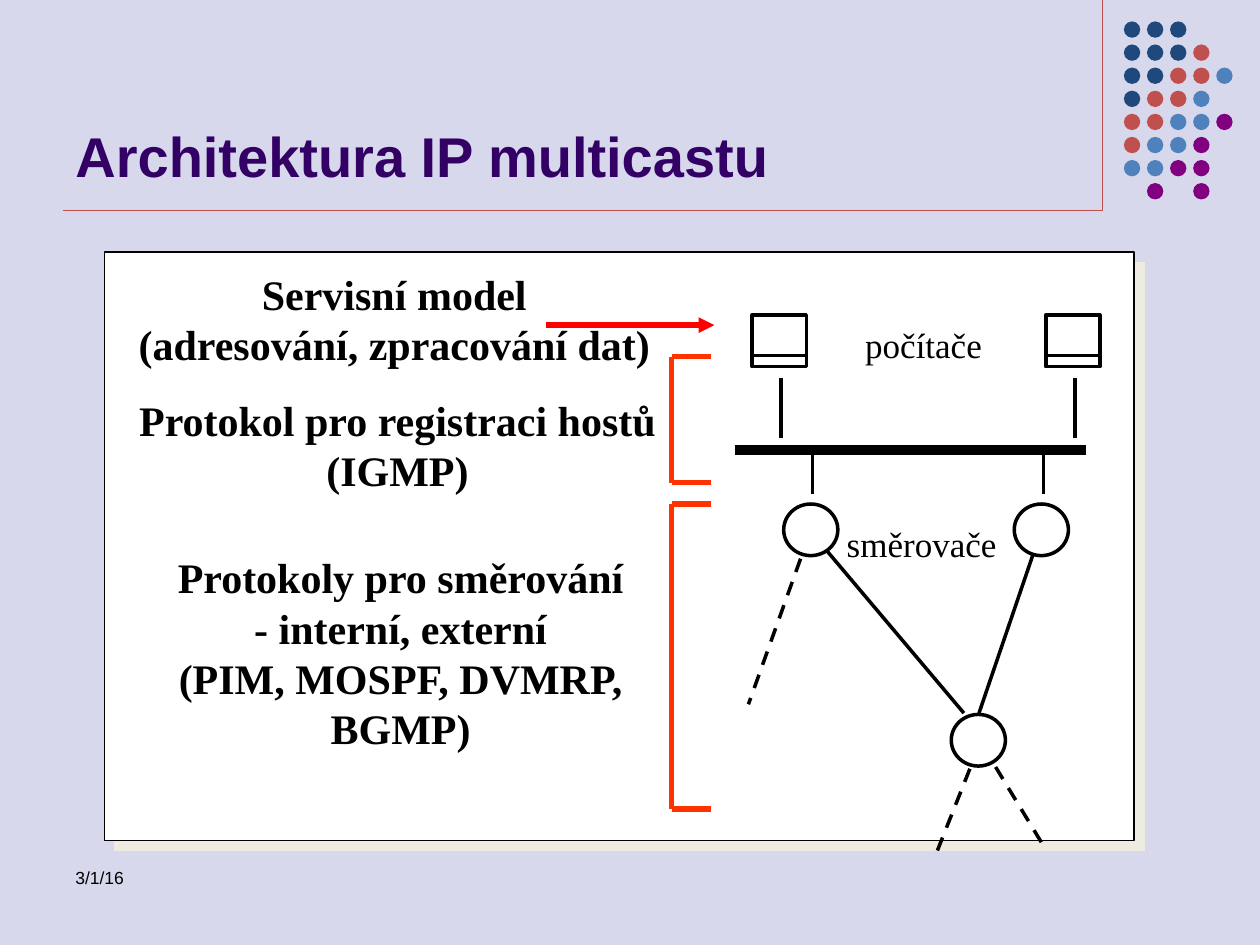
from lxml import etree
from pptx import Presentation
from pptx import util as u
from pptx.dml.color import RGBColor
from pptx.enum import dml, shapes, text
from pptx.oxml.ns import qn

C = {"bg": "D8D8EC", "black": "000000", "white": "FFFFFF", "title": "330066",
     "navy": "1F497D", "brick": "C0504D", "blue": "4F81BD", "purple": "800080",
     "shadow": "EEECE1", "bracket": "FF3300", "arrow": "FF0000"}
SERIF, SANS = "Times New Roman", "Arial"

prs = Presentation()
prs.slide_width, prs.slide_height = u.Inches(10), u.Inches(7.5)
s = prs.slides.add_slide(prs.slide_layouts[6])
s.background.fill.solid()
s.background.fill.fore_color.rgb = RGBColor.from_string(C["bg"])


def draw(kind, box, color, line=None, dashed=False):
    """Add a preset shape (box: left, top, width, height), or a line if kind is
    None (box: x1, y1, x2, y2)."""
    box = [u.Inches(v) for v in box]
    if kind is None:
        sp = s.shapes.add_connector(shapes.MSO_CONNECTOR.STRAIGHT, *box)
        etree.SubElement(sp._element.spPr, qn("a:effectLst"))
        sp.line.color.rgb = RGBColor.from_string(C[color])
        if dashed:
            sp.line.dash_style = dml.MSO_LINE.DASH
    else:
        sp = s.shapes.add_shape(kind, *box)
        sp.shadow.inherit = False
        sp.fill.solid()
        sp.fill.fore_color.rgb = RGBColor.from_string(C[color])
        if line is None:
            sp.line.fill.background()
            return sp
        sp.line.color.rgb = RGBColor.from_string(C["black"])
    sp.line.width = u.Pt(line)
    return sp


def write(box, paragraphs, size, font=SERIF, color="black", bold=False,
          align=text.PP_ALIGN.CENTER, anchor=text.MSO_ANCHOR.TOP, wrap=False):
    tf = s.shapes.add_textbox(*[u.Inches(v) for v in box]).text_frame
    tf.word_wrap = wrap
    tf.vertical_anchor = anchor
    for i, lines in enumerate(paragraphs):
        p = tf.add_paragraph() if i else tf.paragraphs[0]
        p.alignment = align
        for j, words in enumerate(lines.split("\n")):
            if j:
                p.add_line_break()
            r = p.add_run()
            r.text = words
            r.font.name, r.font.size, r.font.bold = font, u.Pt(size), bold
            r.font.color.rgb = RGBColor.from_string(C[color])


RECT, OVAL = shapes.MSO_SHAPE.RECTANGLE, shapes.MSO_SHAPE.OVAL

# Corner rules and dot pattern
draw(None, (8.75, 0, 8.75, 1.67), "brick", 0.75)
draw(None, (0.5, 1.67, 8.75, 1.67), "brick", 0.75)
DOTS = ["nnn", "nnnr", "nnrrb", "nrrb", "rrbbp", "rbbp", "bbpp", " p p"]
KEYS = {"n": "navy", "r": "brick", "b": "blue", "p": "purple"}
PITCH = 0.55 / 3
for row, keys in enumerate(DOTS):
    for col, key in enumerate(keys):
        if key in KEYS:
            draw(OVAL, (8.92 + col * PITCH, 0.17 + row * PITCH, 0.13, 0.13), KEYS[key])

# Date and title
write((0.5, 6.83, 2.33, 0.5), ["3/1/16"], 10, SANS, align=text.PP_ALIGN.LEFT, wrap=True)
write((0.5, 0.13, 8.25, 1.42), ["Architektura IP multicastu"], 32, SANS, "title", True,
      text.PP_ALIGN.LEFT, text.MSO_ANCHOR.BOTTOM, True)

# White panel with a hard offset shadow
panel = draw(RECT, (0.83, 2, 8.17, 4.67), "white", 0.75)
effects = panel._element.spPr.find(qn("a:effectLst"))
shadow = etree.SubElement(effects, qn("a:outerShdw"), blurRad="0", dist=str(u.Pt(8.5)),
                          dir=str(45 * 60000), algn="ctr", rotWithShape="0")
etree.SubElement(shadow, qn("a:srgbClr"), val=C["shadow"])

# Computers and their links to the bus
for x in (5.97, 8.3):
    draw(RECT, (x, 2.5, 0.43, 0.41), "white", 2)
    draw(None, (x, 2.82, x + 0.43, 2.82), "black", 2)
    draw(None, (x + 0.23, 3, x + 0.23, 3.48), "black", 2)

# Bus and its links to the routers
draw(None, (5.83, 3.57, 8.62, 3.57), "black", 6)
for x in (6.45, 8.28):
    draw(None, (x, 3.58, x, 3.92), "black", 2)

# Labels in the network diagram
write((6.72, 2.52, 1.22, 0.43), ["počítače"], 20)
write((6.6, 4.1, 1.43, 0.43), ["směrovače"], 20)

# Links between routers, dashed where they leave the diagram
for ends, dashed in [((8.25, 4.25, 7.77, 5.66), False), ((6.46, 4.25, 7.65, 5.66), False),
                     ((6.42, 4.25, 5.94, 5.59), True), ((7.77, 5.92, 7.44, 6.75), True),
                     ((7.8, 5.92, 8.28, 6.71), True)]:
    draw(None, ends, "black", 2, dashed)

# Routers
for x, y in [(6.22, 4), (8.05, 4), (7.55, 5.67)]:
    draw(OVAL, (x, y, 0.43, 0.41), "white", 2)

# Descriptions of the layers
write((1, 2.08, 4.26, 0.9), ["Servisní model", "(adresování, zpracování dat)"], 24, bold=True)
write((1, 3.08, 4.31, 0.9), ["Protokol pro registraci hostů\n(IGMP)"], 24, bold=True)
write((1.28, 4.33, 3.8, 1.7),
      ["Protokoly pro směrování", " - interní, externí \n(PIM, MOSPF, DVMRP, ", "BGMP)"],
      24, bold=True)

# Brackets
for top, bottom in [(2.83, 3.83), (4, 6.42)]:
    draw(None, (5.33, top, 5.33, bottom), "bracket", 3)
    for y in (top, bottom):
        draw(None, (5.33, y, 5.64, y), "bracket", 3)

# Arrow from the service model to the computers
arrow = draw(None, (4.33, 2.58, 5.67, 2.58), "arrow", 3)
etree.SubElement(arrow.line._get_or_add_ln(), qn("a:tailEnd"), type="triangle")

prs.save("out.pptx")
